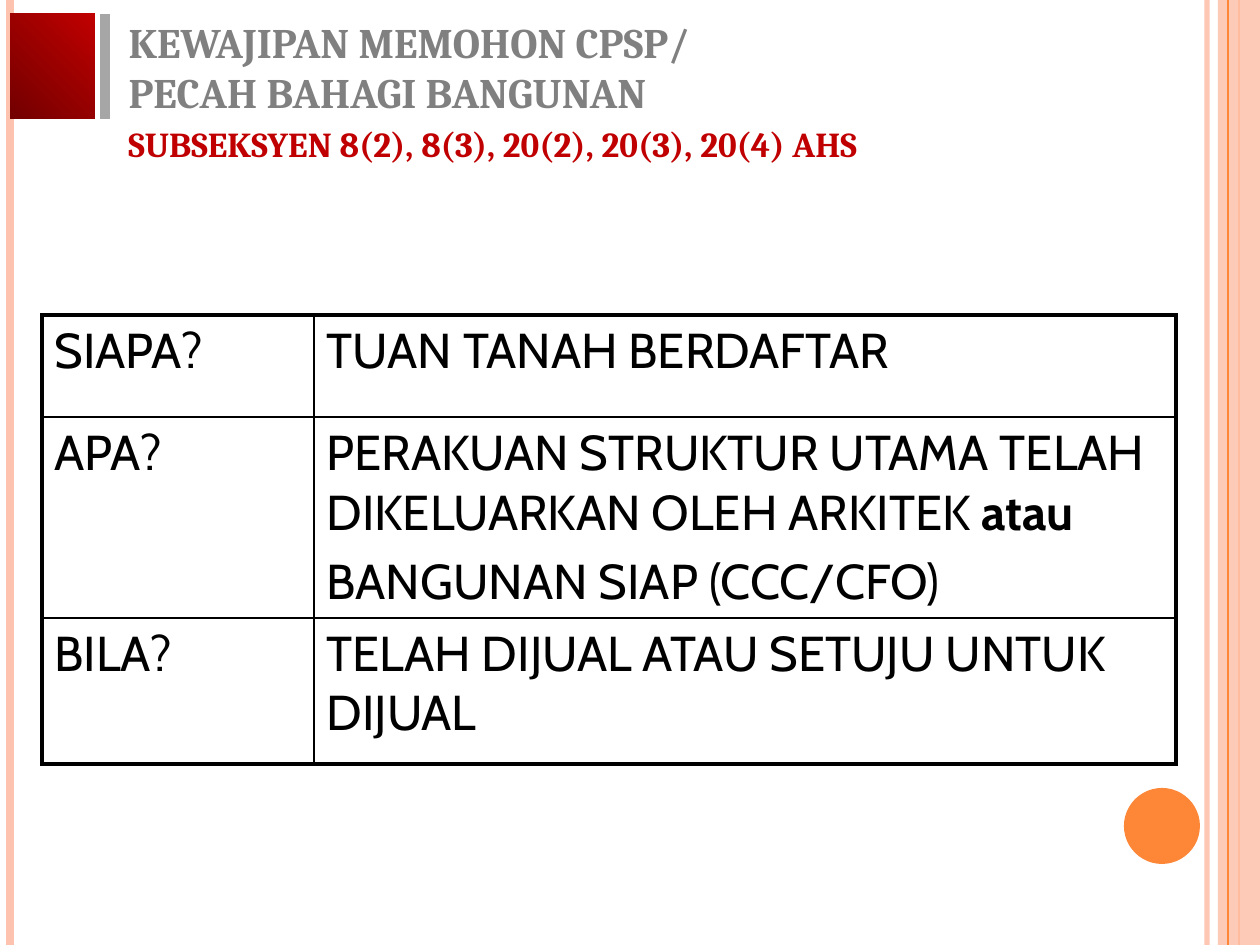
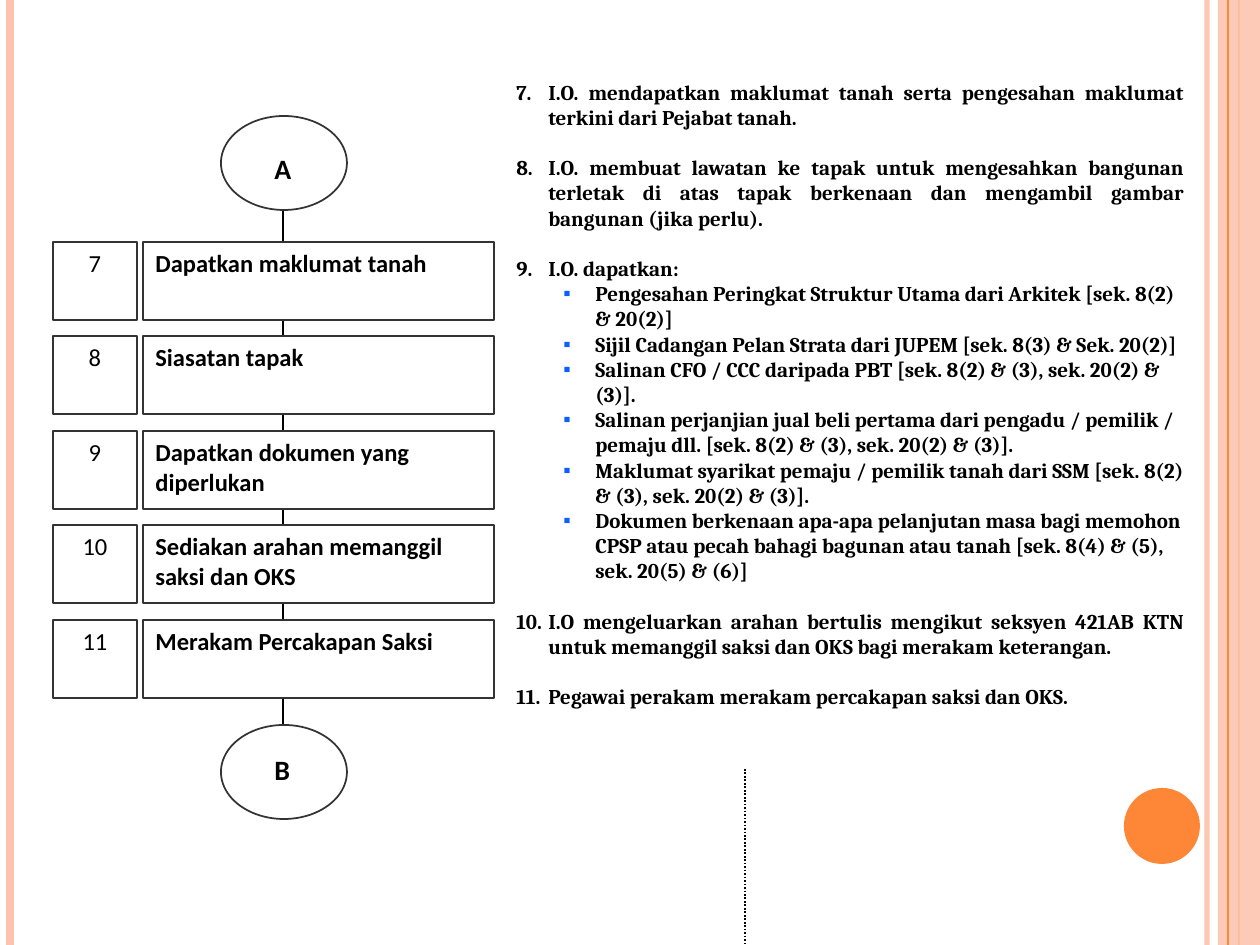
"""Build two slides on the duty to apply for a CPSP and its inquiry steps."""
from dataclasses import dataclass

from lxml import etree
from pptx import Presentation
from pptx import util as u
from pptx.dml.color import RGBColor
from pptx.enum import dml, shapes, text
from pptx.oxml import ns

SCALE = 914400 / 126
WIDE, HIGH = 1260, 945
INK = {
    "black": "000000", "white": "FFFFFF", "edge": "333333",
    "peach": "FEC3AE", "orange": "FE8637", "gray": "808080",
    "bar": "A6A6A6", "red": "C00000", "dark": "720000", "blue": "0D5EFF",
}
RECT = shapes.MSO_SHAPE.RECTANGLE
OVAL = shapes.MSO_SHAPE.OVAL
LEFT, MID, FULL = text.PP_ALIGN.LEFT, text.PP_ALIGN.CENTER, text.PP_ALIGN.JUSTIFY


@dataclass(frozen=True)
class Line:
    x: int
    top: int
    end: int
    ink: str
    width: float
    alpha: int = 100
    dots: bool = False


@dataclass(frozen=True)
class Box:
    x: int
    y: int
    w: int
    h: int
    fill: str = "white"
    edge: str = ""
    kind: shapes.MSO_SHAPE = RECT
    alpha: int = 100


@dataclass(frozen=True)
class Font:
    name: str
    size: int
    ink: str = "black"
    bold: bool = False


@dataclass(frozen=True)
class Item:
    words: str
    start: int = 0
    gap: float = 0


HEAD = Font("Cambria", 24, "gray", True)
SUB = Font("Cambria", 20, "red", True)
GRID = Font("Cabin", 28)
NOTE = Font("Cambria", 12, bold=True)
STEP = Font("Calibri", 14, bold=True)
COUNT = Font("Calibri", 14)
MARK = Font("Calibri", 16, bold=True)

BANDS = (
    Line(1207, 0, HIGH, "peach", 3, 93),
    Line(10, 0, HIGH, "peach", 4.5),
    Line(1239, 0, HIGH, "orange", 1.5),
    Box(1218, 0, 42, HIGH, "peach", alpha=87),
    Line(1228, 0, HIGH, "orange", 0.75),
    Box(1124, 788, 76, 76, "orange", kind=OVAL),
)
ROWS = (
    (102, "SIAPA?", "TUAN TANAH BERDAFTAR"),
    (200, "APA?", "PERAKUAN STRUKTUR UTAMA TELAH DIKELUARKAN OLEH ARKITEK *atau*\n"
                  "BANGUNAN SIAP (CCC/CFO)"),
    (146, "BILA?", "TELAH DIJUAL ATAU SETUJU UNTUK DIJUAL"),
)
STEPS = (
    "Dapatkan maklumat tanah",
    "Siasatan tapak",
    "Dapatkan dokumen yang diperlukan",
    "Sediakan arahan memanggil saksi dan OKS",
    "Merakam Percakapan Saksi",
)
GAP = 14.4
NOTES = (
    Item("I.O. mendapatkan maklumat tanah serta pengesahan maklumat terkini "
         "dari Pejabat tanah.", 7),
    Item("I.O. membuat lawatan ke tapak untuk mengesahkan bangunan terletak di atas "
         "tapak berkenaan dan mengambil gambar bangunan (jika perlu).", 7, GAP),
    Item("I.O. dapatkan:", 7, GAP),
    Item("Pengesahan Peringkat Struktur Utama dari Arkitek [sek. 8(2) & 20(2)]"),
    Item("Sijil Cadangan Pelan Strata dari JUPEM [sek. 8(3) & Sek. 20(2)]"),
    Item("Salinan CFO / CCC daripada PBT [sek. 8(2) & (3), sek. 20(2) & (3)]."),
    Item("Salinan perjanjian jual beli pertama dari pengadu / pemilik / pemaju dll. "
         "[sek. 8(2) & (3), sek. 20(2) & (3)]."),
    Item("Maklumat syarikat pemaju / pemilik tanah dari SSM "
         "[sek. 8(2) & (3), sek. 20(2) & (3)]."),
    Item("Dokumen berkenaan apa-apa pelanjutan masa bagi memohon CPSP atau pecah bahagi "
         "bagunan atau tanah [sek. 8(4) & (5), sek. 20(5) & (6)]"),
    Item("I.O mengeluarkan arahan bertulis mengikut seksyen 421AB KTN untuk memanggil "
         "saksi dan OKS bagi merakam keterangan.", 10, GAP),
    Item("Pegawai perakam merakam percakapan saksi dan OKS.", 10, GAP),
)


def px(num: int) -> u.Emu:
    return u.Emu(round(num * SCALE))


def rgb(ink: str) -> RGBColor:
    return RGBColor.from_string(INK[ink])


def add(node, tag: str, **attrs: str):
    return etree.SubElement(node, ns.qn(tag), attrs)


def fade(node, alpha: int) -> None:
    if alpha < 100:
        add(next(node.iter(ns.qn("a:srgbClr"))), "a:alpha", val=str(alpha * 1000))


def rule(slide, line: Line) -> None:
    con = slide.shapes.add_connector(
        shapes.MSO_CONNECTOR.STRAIGHT, px(line.x), px(line.top), px(line.x), px(line.end))
    con.line.color.rgb = rgb(line.ink)
    con.line.width = u.Pt(line.width)
    if line.dots:
        con.line.dash_style = dml.MSO_LINE.ROUND_DOT
    props = con._element.spPr
    fade(props, line.alpha)
    add(props, "a:effectLst")


def block(slide, box: Box):
    shape = slide.shapes.add_shape(box.kind, px(box.x), px(box.y), px(box.w), px(box.h))
    shape.shadow.inherit = False
    shape.fill.solid()
    shape.fill.fore_color.rgb = rgb(box.fill)
    fade(shape._element.spPr, box.alpha)
    if box.edge:
        shape.line.color.rgb = rgb(box.edge)
        shape.line.width = u.Pt(1)
    else:
        shape.line.fill.background()
    return shape


def style(para, font: Font, align=LEFT) -> None:
    para.alignment = align
    for run in para.runs:
        run.font.name = font.name
        run.font.size = u.Pt(font.size)
        run.font.bold = font.bold
        run.font.color.rgb = rgb(font.ink)


def write(shape, words: str, font: Font, align=LEFT) -> None:
    frame = shape.text_frame
    frame.word_wrap = True
    frame.auto_size = text.MSO_AUTO_SIZE.NONE
    frame.vertical_anchor = text.MSO_ANCHOR.TOP
    frame.text = words
    for para in frame.paragraphs:
        style(para, font, align)


def border(cell, row: int, col: int) -> None:
    props = cell._tc.get_or_add_tcPr()
    outer = {"L": col == 0, "R": col == 1, "T": row == 0, "B": row == len(ROWS) - 1}
    for side, thick in outer.items():
        line = add(props, f"a:ln{side}", w=str(u.Pt(2.25 if thick else 1)))
        add(add(line, "a:solidFill"), "a:srgbClr", val=INK["black"])


def fill(cell, words: str) -> None:
    frame = cell.text_frame
    for row, part in enumerate(words.split("\n")):
        para = frame.add_paragraph() if row else frame.paragraphs[0]
        if row:
            para.space_before = u.Pt(5.6)
        bits = [bit for bit in part.split("*") if bit]
        for bit in bits:
            para.add_run().text = bit
        style(para, GRID)
        for run in para.runs[1:]:
            run.font.bold = True


def grid(slide) -> None:
    high = sum(row[0] for row in ROWS)
    table = slide.shapes.add_table(len(ROWS), 2, px(42), px(315), px(1134), px(high)).table
    table.first_row = table.horz_banding = False
    for col, wide in zip(table.columns, (272, 862)):
        col.width = px(wide)
    for row, (tall, *words) in enumerate(ROWS):
        table.rows[row].height = px(tall)
        for col, part in enumerate(words):
            cell = table.cell(row, col)
            fill(cell, part)
            border(cell, row, col)
            cell.fill.background()


def duty(slide) -> None:
    grid(slide)
    tile = block(slide, Box(10, 14, 85, 105))
    tile.fill.gradient()
    tile.fill.gradient_angle = 45
    for stop, ink in zip(tile.fill.gradient_stops, ("dark", "red")):
        stop.color.rgb = rgb(ink)
    rule(slide, Line(105, 14, 119, "bar", 6))
    title = slide.shapes.title
    title.left, title.top, title.width, title.height = map(px, (116, 10, 1144, 115))
    write(title, "KEWAJIPAN MEMOHON CPSP/\nPECAH BAHAGI BANGUNAN", HEAD)
    sub = slide.shapes.add_textbox(px(116), px(116), px(1124), px(55))
    write(sub, "SUBSEKSYEN 8(2), 8(3), 20(2), 20(3), 20(4) AHS", SUB)


def bullet(para, item: Item) -> None:
    props = para._p.get_or_add_pPr()
    props.set("marL", str(px(32 if item.start else 79)))
    props.set("indent", str(px(-32)))
    color = add(props, "a:buClr")
    add(color, "a:srgbClr", val=INK["black" if item.start else "blue"])
    if item.start:
        add(props, "a:buFont", typeface="+mj-lt")
        add(props, "a:buAutoNum", type="arabicPeriod", startAt=str(item.start))
    else:
        add(props, "a:buFont", typeface="Arial")
        add(props, "a:buChar", char="▪")


def notes(slide) -> None:
    panel = block(slide, Box(504, 73, 693, 696))
    write(panel, "\n".join(item.words for item in NOTES), NOTE)
    for para, item in zip(panel.text_frame.paragraphs, NOTES):
        para.level = 0 if item.start else 1
        para.alignment = FULL if item.start else LEFT
        para.space_before = u.Pt(item.gap)
        bullet(para, item)


def flow(slide) -> None:
    rule(slide, Line(283, 210, 740, "black", 1))
    for row, words in enumerate(STEPS):
        top = 242 + row * 189 // 2
        write(block(slide, Box(143, top, 351, 78, edge="edge")), words, STEP)
        count = block(slide, Box(53, top, 84, 78, edge="edge"))
        write(count, str(row + 7), COUNT, MID)
    for words, top, label in (("A", 116, 145), ("B", 725, 746)):
        block(slide, Box(221, top, 126, 94, edge="edge", kind=OVAL))
        write(block(slide, Box(262, label, 60, 48)), words, MARK)


def steps(slide) -> None:
    rule(slide, Line(745, 769, HIGH, "black", 1, dots=True))
    notes(slide)
    flow(slide)


def main() -> None:
    deck = Presentation()
    deck.slide_width, deck.slide_height = px(WIDE), px(HIGH)
    for layout, draw in ((5, duty), (6, steps)):
        slide = deck.slides.add_slide(deck.slide_layouts[layout])
        for part in BANDS:
            if isinstance(part, Line):
                rule(slide, part)
            else:
                block(slide, part)
        draw(slide)
    deck.save("out.pptx")


if __name__ == "__main__":
    main()
